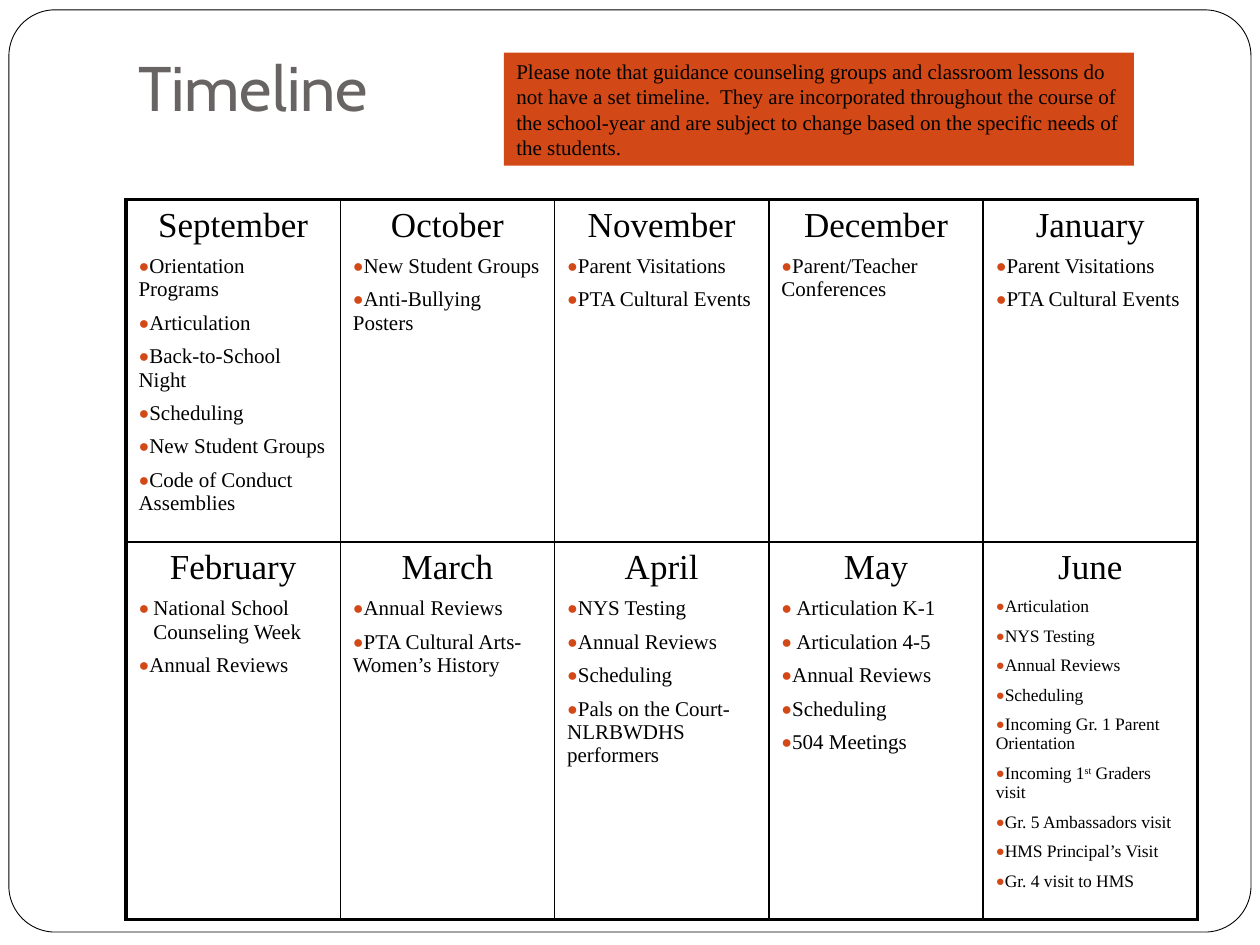
from lxml.etree import SubElement
from pptx import Presentation
from pptx.dml.color import RGBColor
from pptx.enum.shapes import MSO_SHAPE
from pptx.enum.text import MSO_ANCHOR, PP_ALIGN
from pptx.oxml.ns import qn
from pptx.util import Cm, Pt

BLACK = RGBColor(0x00, 0x00, 0x00)
WHITE = RGBColor(0xFF, 0xFF, 0xFF)
GRAY = RGBColor(0x69, 0x64, 0x64)
ORANGE = RGBColor(0xD3, 0x48, 0x17)
SERIF = "Times New Roman"

TITLE = "Timeline"
NOTE = (
    "Please note that guidance counseling groups and classroom lessons do not have a set timeline.  "
    "They are incorporated throughout the course of the school-year and are subject to change "
    "based on the specific needs of the students."
)
HANGING = "National School Counseling Week"
MONTHS = [
    [
        ("September", 12, ["Orientation Programs", "Articulation", "Back-to-School Night",
                           "Scheduling", "New Student Groups", "Code of Conduct Assemblies"]),
        ("October", 12, ["New Student Groups", "Anti-Bullying Posters"]),
        ("November", 12, ["Parent Visitations", "PTA Cultural Events"]),
        ("December", 12, ["Parent/Teacher Conferences"]),
        ("January", 12, ["Parent Visitations", "PTA Cultural Events"]),
    ],
    [
        ("February", 12, [HANGING, "Annual Reviews"]),
        ("March", 12, ["Annual Reviews", "PTA Cultural Arts-Women’s History"]),
        ("April", 12, ["NYS Testing", "Annual Reviews", "Scheduling",
                       "Pals on the Court-NLRBWDHS performers"]),
        ("May", 12, [" Articulation K-1", " Articulation 4-5", "Annual Reviews",
                     "Scheduling", "504 Meetings"]),
        ("June", 10, ["Articulation", "NYS Testing", "Annual Reviews", "Scheduling",
                      "Incoming Gr. 1 Parent Orientation", ("Incoming 1", "st", " Graders visit"),
                      "Gr. 5 Ambassadors visit", "HMS Principal’s Visit", "Gr. 4 visit to HMS"]),
    ],
]
COL_W = Cm(4.32)
ROW_H = [Cm(6.48), Cm(7.52)]
THIN, THICK = Pt(1), Pt(2.25)


def write(p, text, size=12, font=SERIF, color=BLACK, align=PP_ALIGN.LEFT,
          before=0, bullet=False, hang=0):
    p.alignment = align
    p.space_before = Pt(before)
    if bullet:
        pPr = p._p.get_or_add_pPr()
        pPr.set("marL", str(hang))
        pPr.set("indent", str(-hang))
        clr = SubElement(pPr, qn("a:buClr"))
        SubElement(clr, qn("a:srgbClr"), val=str(ORANGE))
        SubElement(pPr, qn("a:buSzPct"), val="85000")
        SubElement(pPr, qn("a:buFont"), typeface=font)
        SubElement(pPr, qn("a:buChar"), char="●")
    parts = (text,) if isinstance(text, str) else text
    for i, part in enumerate(parts):
        r = p.add_run()
        r.text = part
        r.font.size = Pt(size)
        r.font.name = font
        r.font.color.rgb = color
        if i == 1:
            r.font._element.set("baseline", "30000")


def set_borders(cell, widths):
    tcPr = cell._tc.get_or_add_tcPr()
    for side, width in zip("LRTB", widths):
        ln = SubElement(tcPr, qn(f"a:ln{side}"), w=str(width))
        fill = SubElement(ln, qn("a:solidFill"))
        SubElement(fill, qn("a:srgbClr"), val=str(BLACK))
    cell.fill.background()


def add_panel(s, kind, fill, *box):
    sp = s.shapes.add_shape(kind, *box)
    sp.shadow.inherit = False
    sp.fill.solid()
    sp.fill.fore_color.rgb = fill
    sp.line.fill.background()
    return sp


def add_calendar(s):
    rows, cols = len(MONTHS), len(MONTHS[0])
    table = s.shapes.add_table(rows, cols, Cm(2.54), Cm(4.02), COL_W * cols, sum(ROW_H)).table
    table.first_row = table.horz_banding = False
    for col in table.columns:
        col.width = COL_W
    for i, months in enumerate(MONTHS):
        table.rows[i].height = ROW_H[i]
        for j, (month, size, events) in enumerate(months):
            cell = table.cell(i, j)
            edges = (j == 0, j == cols - 1, i == 0, i == rows - 1)
            set_borders(cell, [THICK if edge else THIN for edge in edges])
            tf = cell.text_frame
            write(tf.paragraphs[0], month, size=20, align=PP_ALIGN.CENTER, before=5.8)
            for event in events:
                hang = Cm(0.3) if event == HANGING else 0
                write(tf.add_paragraph(), event, size=size, before=5.8, bullet=True, hang=hang)


def main():
    prs = Presentation()
    prs.slide_width, prs.slide_height = Cm(25.4), Cm(19.05)
    s = prs.slides.add_slide(prs.slide_layouts[6])

    frame = add_panel(s, MSO_SHAPE.ROUNDED_RECTANGLE, WHITE, Cm(0.18), Cm(0.2), Cm(25.04), Cm(18.59))
    frame.adjustments[0] = 0.05
    frame.line.color.rgb = BLACK
    frame.line.width = Pt(0.5)

    tf = s.shapes.add_textbox(Cm(2.54), Cm(0.78), Cm(6.55), Cm(1.98)).text_frame
    tf.word_wrap = True
    tf.vertical_anchor = MSO_ANCHOR.BOTTOM
    tf.margin_bottom = Cm(0.25)
    write(tf.paragraphs[0], TITLE, size=36, font="Cabin", color=GRAY)

    add_calendar(s)

    note = add_panel(s, MSO_SHAPE.RECTANGLE, ORANGE, Cm(10.16), Cm(1.06), Cm(12.7), Cm(2.28))
    tf = note.text_frame
    tf.word_wrap = True
    tf.vertical_anchor = MSO_ANCHOR.TOP
    write(tf.paragraphs[0], NOTE)

    prs.save("out.pptx")


if __name__ == "__main__":
    main()
